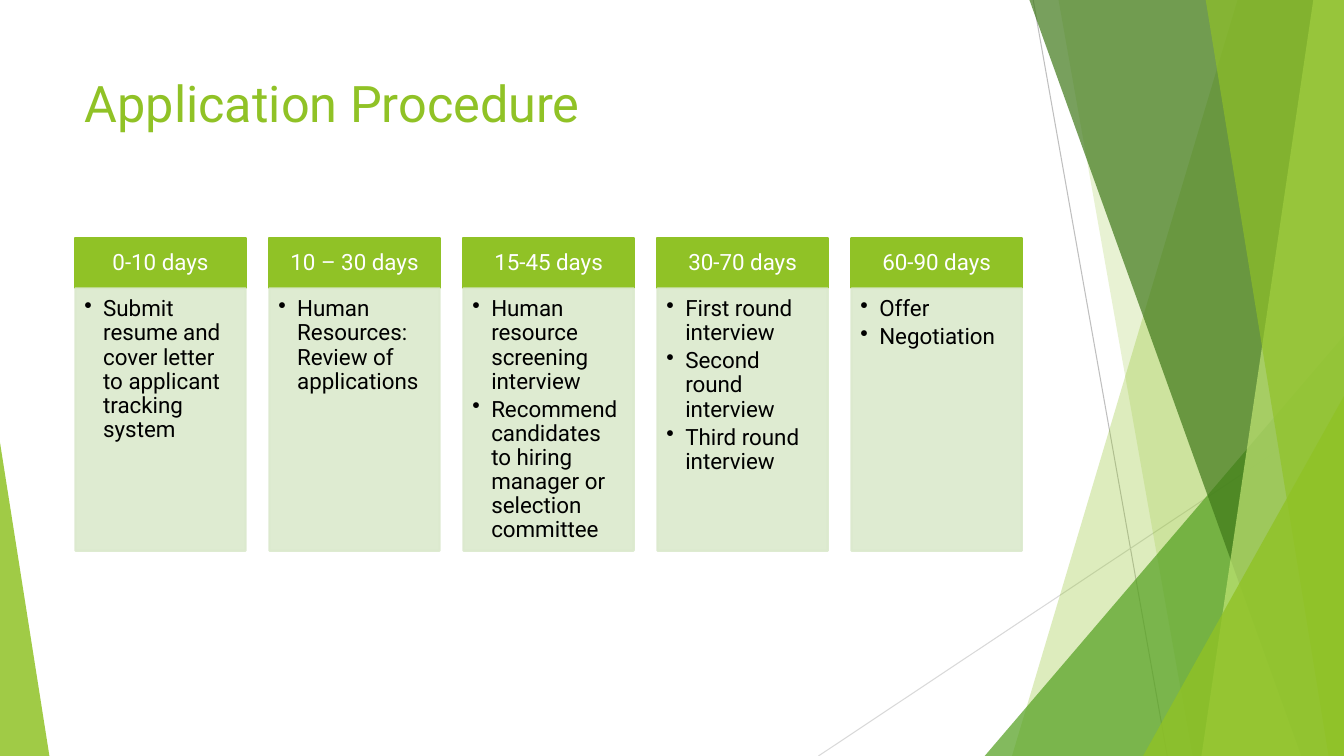
from lxml.etree import SubElement
from pptx import Presentation
from pptx.dml.color import RGBColor
from pptx.enum.shapes import MSO_CONNECTOR, MSO_SHAPE
from pptx.enum.text import MSO_ANCHOR, MSO_AUTO_SIZE, PP_ALIGN
from pptx.oxml.ns import qn
from pptx.util import Pt


def paint(shape, color, alpha=100, edge=None):
    shape.shadow.inherit = False
    shape.fill.solid()
    shape.fill.fore_color.rgb = RGBColor.from_string(color)
    if edge:
        shape.line.width = Pt(edge)
        shape.line.color.rgb = RGBColor.from_string(color)
    else:
        shape.line.fill.background()
    if alpha < 100:
        for node in shape.element.spPr.iter(qn("a:srgbClr")):
            SubElement(node, qn("a:alpha"), val=str(alpha * 1000))


def style(para, size, color, align):
    para.alignment = align
    for run in para.runs:
        run.font.name = "Roboto"
        run.font.size = Pt(size)
        run.font.color.rgb = RGBColor.from_string(color)


GREEN = "90C226"
WIDE, HIGH = 960, 540

deck = Presentation()
deck.slide_width, deck.slide_height = Pt(WIDE), Pt(HIGH)
slide = deck.slides.add_slide(deck.slide_layouts[5])
shapes = slide.shapes

title = shapes.title
title.left, title.top, title.width, title.height = Pt(53.3), Pt(48.2), Pt(676.8), Pt(103.7)
frame = title.text_frame
frame.text = "Application Procedure"
frame.auto_size = MSO_AUTO_SIZE.NONE
frame.vertical_anchor = MSO_ANCHOR.TOP
style(frame.paragraphs[0], 36, GREEN, PP_ALIGN.LEFT)

for color, x1, y1, x2, y2 in [
    ("BFBFBF", 738, 0, 833.8, HIGH),
    ("D9D9D9", WIDE, 290.2, 584.6, HIGH),
]:
    line = shapes.add_connector(MSO_CONNECTOR.STRAIGHT, Pt(x1), Pt(y1), Pt(x2), Pt(y2))
    line.line.color.rgb = RGBColor.from_string(color)
    line.line.width = Pt(0.75)
    SubElement(line.element.spPr, qn("a:effectLst"))

bands = [
    ("band", GREEN, 30, (884.2, 722.9)),
    ("band", GREEN, 20, (756, 851.8)),
    ("peak", "54A021", 72, (703.4, 239.8, 256.6, 1)),
    ("band", "3F7819", 70, (735.1, 929.5)),
    ("band", "C0E474", 70, (938.2, 858.2)),
    ("band", GREEN, 65, (861.1, 949)),
    ("peak", GREEN, 80, (816.5, 283, 143.5, 1)),
    ("peak", GREEN, 85, (0, 316.1, 35.3, 0)),
]
for kind, color, alpha, place in bands:
    if kind == "band":
        head, foot = place
        edge = [(WIDE, -0.7), (WIDE, HIGH), (foot, HIGH)]
        pen = shapes.build_freeform(Pt(head), Pt(-0.7))
        pen.add_line_segments([(Pt(x), Pt(y)) for x, y in edge])
        facet = pen.convert_to_shape()
    else:
        left, top, width, tip = place
        facet = shapes.add_shape(
            MSO_SHAPE.ISOSCELES_TRIANGLE, Pt(left), Pt(top), Pt(width), Pt(HIGH - top)
        )
        facet.adjustments[0] = tip
    paint(facet, color, alpha)

stages = [
    ("0-10 days", ["Submit resume and cover letter to applicant tracking system"]),
    ("10 – 30 days", ["Human Resources: Review of applications"]),
    ("15-45 days", [
        "Human resource screening interview",
        "Recommend candidates to hiring manager or selection committee",
    ]),
    ("30-70 days", [
        "First round interview", "Second round interview", "Third round interview",
    ]),
    ("60-90 days", ["Offer", "Negotiation"]),
]
for index, (days, steps) in enumerate(stages):
    left = 53.8 + index * 138.6
    for top, height, color, alpha, pads, anchor, lines in [
        (169.8, 36.2, GREEN, 100, (8.5, 4.9, 8.5, 4.9), MSO_ANCHOR.MIDDLE, [days]),
        (206, 187.4, "DBE9CD", 90, (6.4, 6.4, 8.5, 9.6), MSO_ANCHOR.TOP, steps),
    ]:
        card = shapes.add_shape(MSO_SHAPE.RECTANGLE, Pt(left), Pt(top), Pt(121.7), Pt(height))
        paint(card, color, alpha, 1.5)
        frame = card.text_frame
        frame.word_wrap = True
        frame.vertical_anchor = anchor
        frame.margin_left, frame.margin_top, frame.margin_right, frame.margin_bottom = map(Pt, pads)
        frame.text = "\n".join(lines)
        for para in frame.paragraphs:
            para.line_spacing = 0.9
            if lines is steps:
                style(para, 16, "000000", PP_ALIGN.LEFT)
                para.space_after = Pt(2.7)
                props = para._p.get_or_add_pPr()
                props.set("marL", str(Pt(13.5)))
                props.set("indent", str(Pt(-13.5)))
                SubElement(props, qn("a:buChar"), char="•")
            else:
                style(para, 16, "FFFFFF", PP_ALIGN.CENTER)

deck.save("out.pptx")
